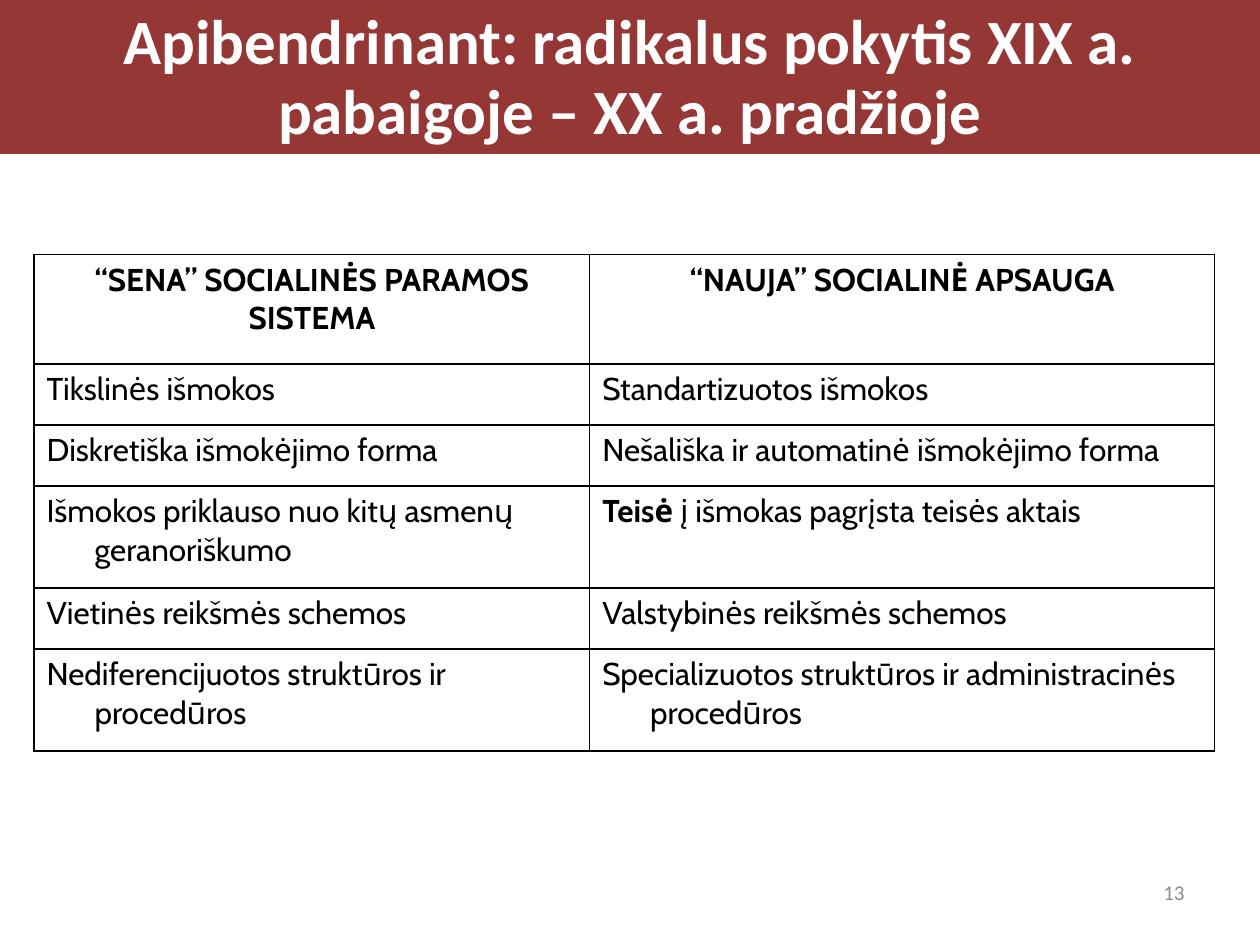
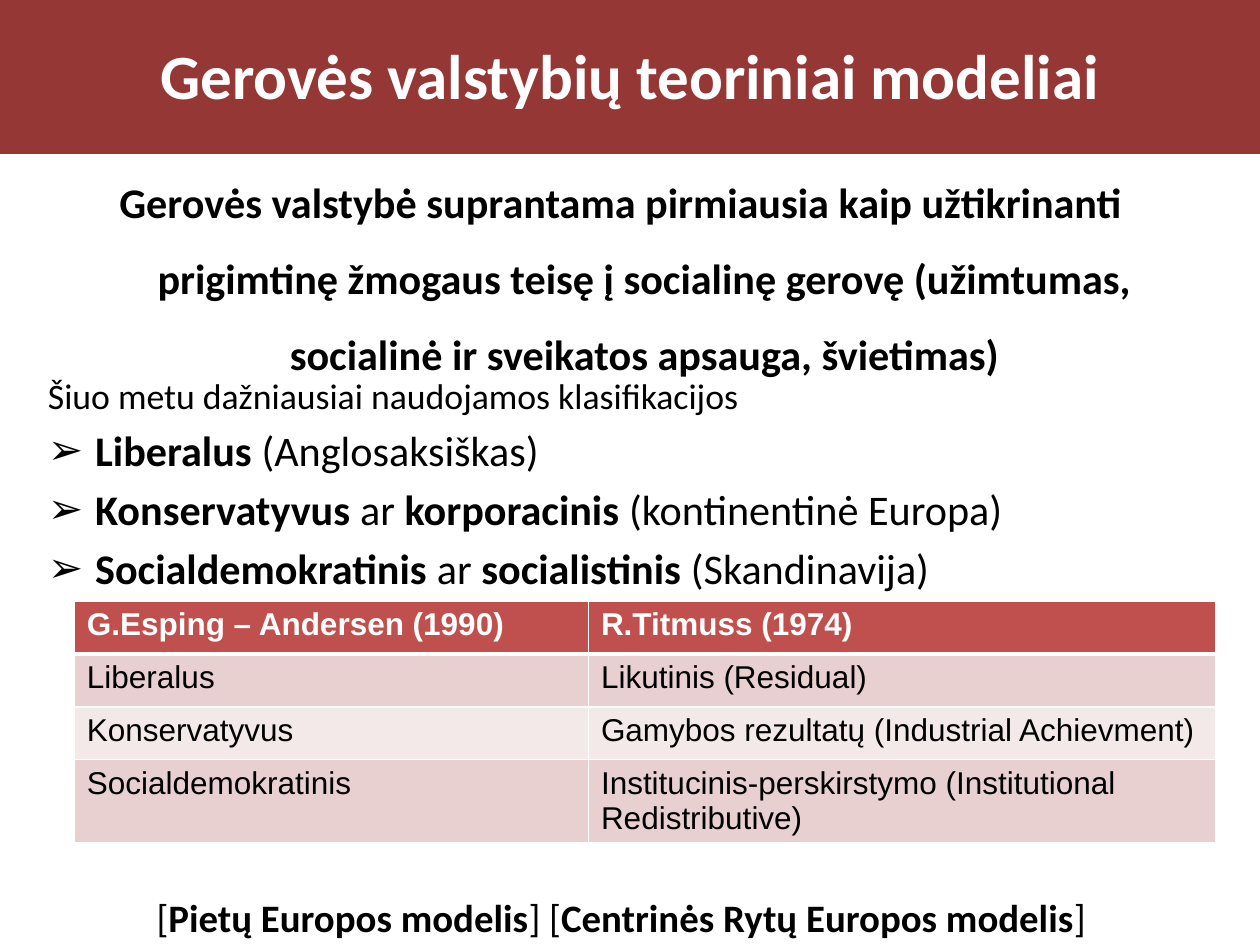
from dataclasses import dataclass
from pptx import Presentation
from pptx.dml.color import RGBColor
from pptx.enum.text import MSO_ANCHOR, MSO_AUTO_SIZE, PP_ALIGN
from pptx.oxml.xmlchemy import OxmlElement
from pptx.util import Emu, Inches, Pt


@dataclass(frozen=True)
class Theme:
    band: str = "953735"
    head: str = "C0504D"
    rose: str = "E8D0D0"
    pale: str = "F4E9E9"
    white: str = "FFFFFF"
    black: str = "000000"
    grey: str = "8C8C8C"
    main: str = "Calibri"
    title: float = 36
    lead: float = 24.1
    note: float = 20.4
    foot: float = 22.2
    cell: float = 18
    page: float = 12


look = Theme()
deck = Presentation()
deck.slide_width, deck.slide_height = Inches(10), Inches(7.5)


def frame(left, top, width, height):
    """Turn percentages of the slide into lengths."""
    wide, high = deck.slide_width / 100, deck.slide_height / 100
    return [Emu(round(v)) for v in (left * wide, top * high, width * wide, height * high)]


def write(par, text, size, color=look.black, bold=False, align=PP_ALIGN.LEFT, font=look.main):
    """Fill a paragraph; text between stars is bold."""
    par.alignment = align
    par.font.name, par.font.size, par.font.bold = font, Pt(size), bold
    par.font.color.rgb = RGBColor.from_string(color)
    for i, part in enumerate(text.split("*")):
        if part:
            run = par.add_run()
            run.text = part
            if i % 2:
                run.font.bold = True


# Titles and tables of both slides
pages = [
    dict(
        layout=5, title="Apibendrinant: radikalus pokytis XIX a. pabaigoje – XX a. pradžioje",
        left=2.7, top=26.93, cols=[44.1, 49.6], rows=[11.6, 6.45, 6.45, 10.8, 6.45, 10.8],
        font="Cabin", line=look.black, under=1, fills=[None] * 6,
        ink=look.black, align=PP_ALIGN.CENTER, hang=0.38,
        cells=[
            ("“SENA” SOCIALINĖS PARAMOS SISTEMA", "“NAUJA” SOCIALINĖ APSAUGA"),
            ("Tikslinės išmokos", "Standartizuotos išmokos"),
            ("Diskretiška išmokėjimo forma", "Nešališka ir automatinė išmokėjimo forma"),
            ("Išmokos priklauso nuo kitų asmenų geranoriškumo",
             "*Teisė* į išmokas pagrįsta teisės aktais"),
            ("Vietinės reikšmės schemos", "Valstybinės reikšmės schemos"),
            ("Nediferencijuotos struktūros ir procedūros",
             "Specializuotos struktūros ir administracinės procedūros"),
        ],
    ),
    dict(
        layout=1, title="Gerovės valstybių teoriniai modeliai",
        left=5.9, top=63.6, cols=[40.8, 49.8], rows=[5.6, 5.6, 5.6, 8.67],
        font="Arial", line=look.white, under=3,
        fills=[look.head, look.rose, look.pale, look.rose],
        ink=look.white, align=PP_ALIGN.LEFT, hang=0,
        cells=[
            ("G.Esping – Andersen (1990)", "R.Titmuss (1974)"),
            ("Liberalus", "Likutinis (Residual)"),
            ("Konservatyvus", "Gamybos rezultatų (Industrial Achievment)"),
            ("Socialdemokratinis", "Institucinis-perskirstymo (Institutional Redistributive)"),
        ],
    ),
]

for page in pages:
    slide = deck.slides.add_slide(deck.slide_layouts[page["layout"]])

    # Title band
    band = slide.shapes.title
    band.left, band.top, band.width, band.height = frame(0, 0, 100, 16.3)
    band.fill.solid()
    band.fill.fore_color.rgb = RGBColor.from_string(look.band)
    band.text_frame.auto_size = MSO_AUTO_SIZE.NONE
    band.text_frame.vertical_anchor = MSO_ANCHOR.MIDDLE
    par = band.text_frame.paragraphs[0]
    par.line_spacing = Pt(40)
    write(par, page["title"], look.title, look.white, True, PP_ALIGN.CENTER)

    # Table
    cols, rows = page["cols"], page["rows"]
    spot = frame(page["left"], page["top"], sum(cols), sum(rows))
    table = slide.shapes.add_table(len(rows), len(cols), *spot).table
    table.first_row = table.horz_banding = False
    for col, width in zip(table.columns, cols):
        col.width = frame(0, 0, width, 0)[2]
    for r, row in enumerate(table.rows):
        row.height = frame(0, 0, 0, rows[r])[3]
        for cell, text in zip(row.cells, page["cells"][r]):
            # Borders, the one under the header may be thicker
            props = cell._tc.get_or_add_tcPr()
            for side in "LRTB":
                thick = (r, side) in ((0, "B"), (1, "T"))
                edge = OxmlElement(f"a:ln{side}")
                edge.set("w", str(Pt(page["under"] if thick else 1)))
                paint = OxmlElement("a:solidFill")
                color = OxmlElement("a:srgbClr")
                color.set("val", page["line"])
                paint.append(color)
                edge.append(paint)
                props.append(edge)
            if page["fills"][r]:
                cell.fill.solid()
                cell.fill.fore_color.rgb = RGBColor.from_string(page["fills"][r])
            else:
                cell.fill.background()
            par = cell.text_frame.paragraphs[0]
            if r == 0:
                write(par, text, look.cell, page["ink"], True, page["align"], page["font"])
            else:
                write(par, text, look.cell, font=page["font"])
                indent = par._p.get_or_add_pPr()
                indent.set("marL", str(Inches(page["hang"])))
                indent.set("indent", str(-Inches(page["hang"])))

first, second = deck.slides

# Page number
box = first.shapes.add_textbox(*frame(74.2, 91.07, 20.8, 6.67)).text_frame
box.word_wrap = True
box.vertical_anchor = MSO_ANCHOR.MIDDLE
write(box.paragraphs[0], "13", look.page, look.grey, align=PP_ALIGN.RIGHT)

# Body list: text, size, bold, align, line spacing, space before, bullet
items = [
    ("Gerovės valstybė suprantama pirmiausia kaip užtikrinanti prigimtinę žmogaus teisę "
     "į socialinę gerovę (užimtumas, socialinė ir sveikatos apsauga, švietimas)",
     look.lead, True, PP_ALIGN.CENTER, 1.5, None, False),
    ("Šiuo metu dažniausiai naudojamos klasifikacijos",
     look.note, False, PP_ALIGN.LEFT, 0.7, None, False),
]
for text in ("*Liberalus* (Anglosaksiškas)",
             "*Konservatyvus* ar *korporacinis* (kontinentinė Europa)",
             "*Socialdemokratinis* ar *socialistinis* (Skandinavija)"):
    items.append((text, look.lead, False, PP_ALIGN.LEFT, None, None, True))
items.append(("[*Pietų Europos modelis*] [*Centrinės Rytų Europos modelis*]",
              look.foot, False, PP_ALIGN.CENTER, None, Pt(172), False))

body = second.placeholders[1]
body.left, body.top, body.width, body.height = frame(2.8, 15.33, 93, 81.87)
body.text_frame.auto_size = MSO_AUTO_SIZE.NONE
for i, (text, size, bold, align, line, gap, mark) in enumerate(items):
    par = body.text_frame.add_paragraph() if i else body.text_frame.paragraphs[0]
    if line:
        par.line_spacing = line
    if gap:
        par.space_before = gap
    bullet = OxmlElement("a:buChar" if mark else "a:buNone")
    if mark:
        bullet.set("char", "➢")
    par._p.get_or_add_pPr().append(bullet)
    write(par, text, size, bold=bold, align=align)

deck.save("out.pptx")
